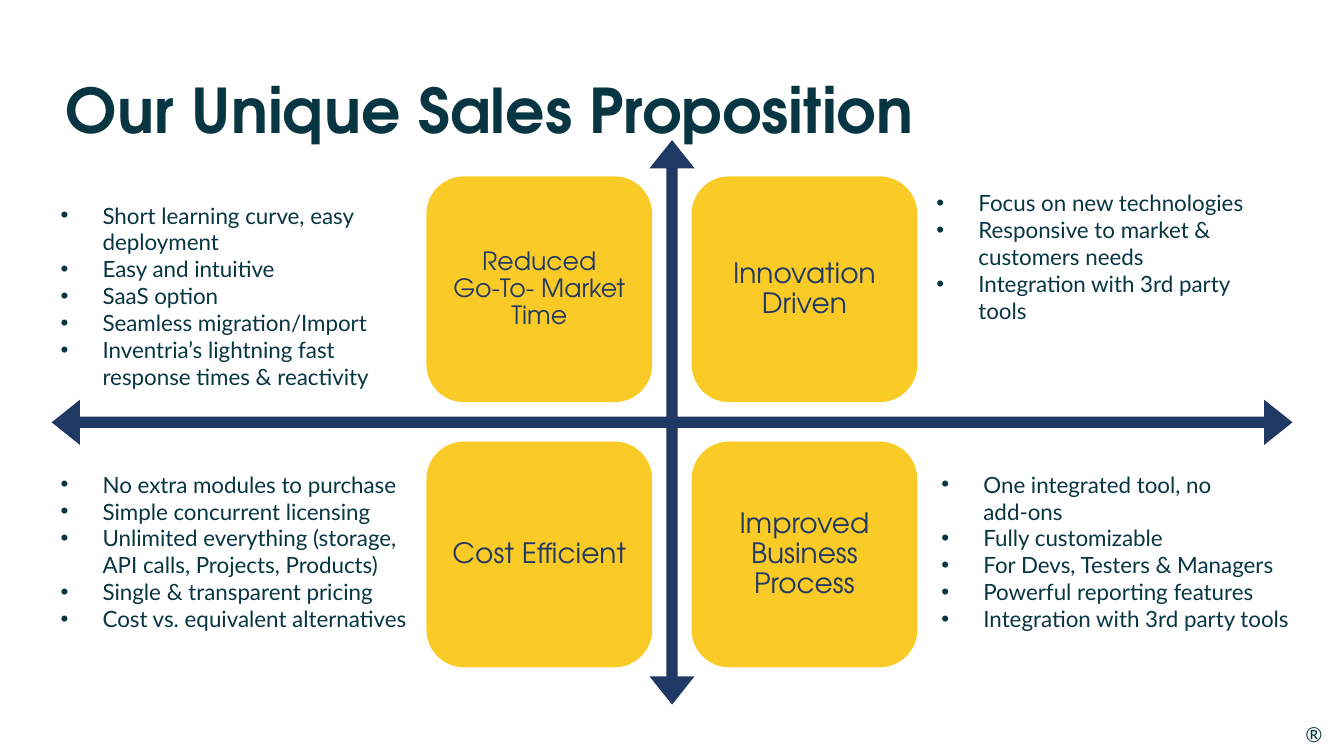
from dataclasses import dataclass

from lxml.etree import SubElement
from pptx import Presentation
from pptx.dml.color import RGBColor
from pptx.enum.shapes import MSO_SHAPE as Preset
from pptx.enum.text import MSO_ANCHOR as Anchor, MSO_AUTO_SIZE as AutoSize, PP_ALIGN as Align
from pptx.oxml.ns import qn
from pptx.util import Pt


@dataclass(frozen=True)
class Theme:
    ink: RGBColor = RGBColor.from_string("073642")
    navy: RGBColor = RGBColor.from_string("203864")
    yellow: RGBColor = RGBColor.from_string("FACB26")
    heading_font: str = "TeX Gyre Adventor"
    body_font: str = "Lato"
    title_size: float = 44
    tile_size: float = 20
    small_tile_size: float = 18
    bullet_size: float = 16
    mark_size: float = 14.7


@dataclass(frozen=True)
class Tile:
    column: int
    row: int
    label: str
    size: float


@dataclass(frozen=True)
class BulletList:
    left: float
    top: float
    width: float
    height: float
    items: tuple[str, ...]


THEME = Theme()
TILE_LEFT, TILE_TOP, TILE_SIDE, TILE_PITCH = 304.6, 126, 161.3, 189.4
TILE_INSET = 5.6
LIST_INSET = 8.7
BULLET_INDENT = 30

TILES = (
    Tile(0, 0, "Reduced\vGo-To- Market Time", THEME.small_tile_size),
    Tile(1, 0, "Innovation Driven", THEME.tile_size),
    Tile(0, 1, "Cost Efficient", THEME.tile_size),
    Tile(1, 1, "Improved Business Process", THEME.tile_size),
)

BULLET_LISTS = (
    BulletList(34.6, 135.4, 268.6, 134.6, (
        "Short learning curve, easy deployment",
        "Easy and intuitive",
        "SaaS option",
        "Seamless migration/Import",
        "Inventria’s lightning fast response times & reactivity",
    )),
    BulletList(34.6, 327.6, 276.5, 134.6, (
        "No extra modules to purchase",
        "Simple concurrent licensing",
        "Unlimited everything (storage, API calls, Projects, Products)",
        "Single & transparent pricing",
        "Cost vs. equivalent alternatives",
    )),
    BulletList(660.2, 126.7, 265, 134.6, (
        "Focus on new technologies",
        "Responsive to market & customers needs",
        "Integration with 3rd party tools",
    )),
    BulletList(663.8, 327.6, 276.5, 183.6, (
        "One integrated tool, no\vadd-ons",
        "Fully customizable",
        "For Devs, Testers & Managers",
        "Powerful reporting features",
        "Integration with 3rd party tools",
    )),
)


def set_frame(frame, horizontal: float, vertical: float, anchor=Anchor.TOP) -> None:
    frame.word_wrap = True
    frame.auto_size = AutoSize.NONE
    frame.vertical_anchor = anchor
    frame.margin_left = frame.margin_right = Pt(horizontal)
    frame.margin_top = frame.margin_bottom = Pt(vertical)


def format_runs(paragraph, font: str, size: float, color: RGBColor, bold: bool = False) -> None:
    for run in paragraph.runs:
        run.font.name = font
        run.font.size = Pt(size)
        run.font.bold = bold
        run.font.color.rgb = color
    for line_break in paragraph._p.findall(qn("a:br")):
        SubElement(line_break, qn("a:rPr")).set("sz", str(int(size * 100)))


def add_title(slide, text: str) -> None:
    title = slide.shapes.title
    title.left, title.top, title.width, title.height = Pt(41.8), Pt(28.8), Pt(828), Pt(104.4)
    set_frame(title.text_frame, 5, 3, Anchor.MIDDLE)
    title.text_frame.text = text
    paragraph = title.text_frame.paragraphs[0]
    paragraph.alignment = Align.LEFT
    paragraph.line_spacing = 0.9
    format_runs(paragraph, THEME.heading_font, THEME.title_size, THEME.ink, bold=True)


def add_filled_shape(slide, preset, left: float, top: float, width: float, height: float,
                     color: RGBColor):
    shape = slide.shapes.add_shape(preset, Pt(left), Pt(top), Pt(width), Pt(height))
    shape.shadow.inherit = False
    shape.fill.solid()
    shape.fill.fore_color.rgb = color
    shape.line.fill.background()
    return shape


def add_axes(slide) -> None:
    axes = add_filled_shape(slide, Preset.QUAD_ARROW, 36.9, 100.1, 886.3, 403.2, THEME.navy)
    for index, ratio in enumerate((0.02, 0.04, 0.05)):
        axes.adjustments[index] = ratio


def add_tile(slide, tile: Tile) -> None:
    shape = add_filled_shape(
        slide, Preset.ROUNDED_RECTANGLE,
        TILE_LEFT + tile.column * TILE_PITCH, TILE_TOP + tile.row * TILE_PITCH,
        TILE_SIDE, TILE_SIDE, THEME.yellow)
    set_frame(shape.text_frame, TILE_INSET, TILE_INSET, Anchor.MIDDLE)
    shape.text_frame.text = tile.label
    paragraph = shape.text_frame.paragraphs[0]
    paragraph.alignment = Align.CENTER
    paragraph.line_spacing = 0.9
    format_runs(paragraph, THEME.heading_font, tile.size, THEME.navy)


def add_bullet_list(slide, bullets: BulletList) -> None:
    box = slide.shapes.add_textbox(
        Pt(bullets.left), Pt(bullets.top), Pt(bullets.width), Pt(bullets.height))
    frame = box.text_frame
    set_frame(frame, LIST_INSET, LIST_INSET)
    frame.text = "\n".join(bullets.items)
    for paragraph in frame.paragraphs:
        properties = paragraph._p.get_or_add_pPr()
        properties.set("marL", str(Pt(BULLET_INDENT)))
        properties.set("indent", str(-Pt(BULLET_INDENT)))
        SubElement(properties, qn("a:buFont")).set("typeface", "Arial")
        SubElement(properties, qn("a:buChar")).set("char", "•")
        format_runs(paragraph, THEME.body_font, THEME.bullet_size, THEME.ink)


def add_registered_mark(slide) -> None:
    box = slide.shapes.add_textbox(Pt(932.4), Pt(515.5), Pt(13), Pt(17.3))
    set_frame(box.text_frame, 0, 0)
    box.text_frame.text = "®"
    format_runs(box.text_frame.paragraphs[0], THEME.body_font, THEME.mark_size, THEME.ink)


def main() -> None:
    presentation = Presentation()
    presentation.slide_width, presentation.slide_height = Pt(960), Pt(540)
    slide = presentation.slides.add_slide(presentation.slide_layouts[5])
    add_title(slide, "Our Unique Sales Proposition")
    add_registered_mark(slide)
    add_axes(slide)
    for tile in TILES:
        add_tile(slide, tile)
    for bullets in BULLET_LISTS:
        add_bullet_list(slide, bullets)
    presentation.save("out.pptx")


if __name__ == "__main__":
    main()
